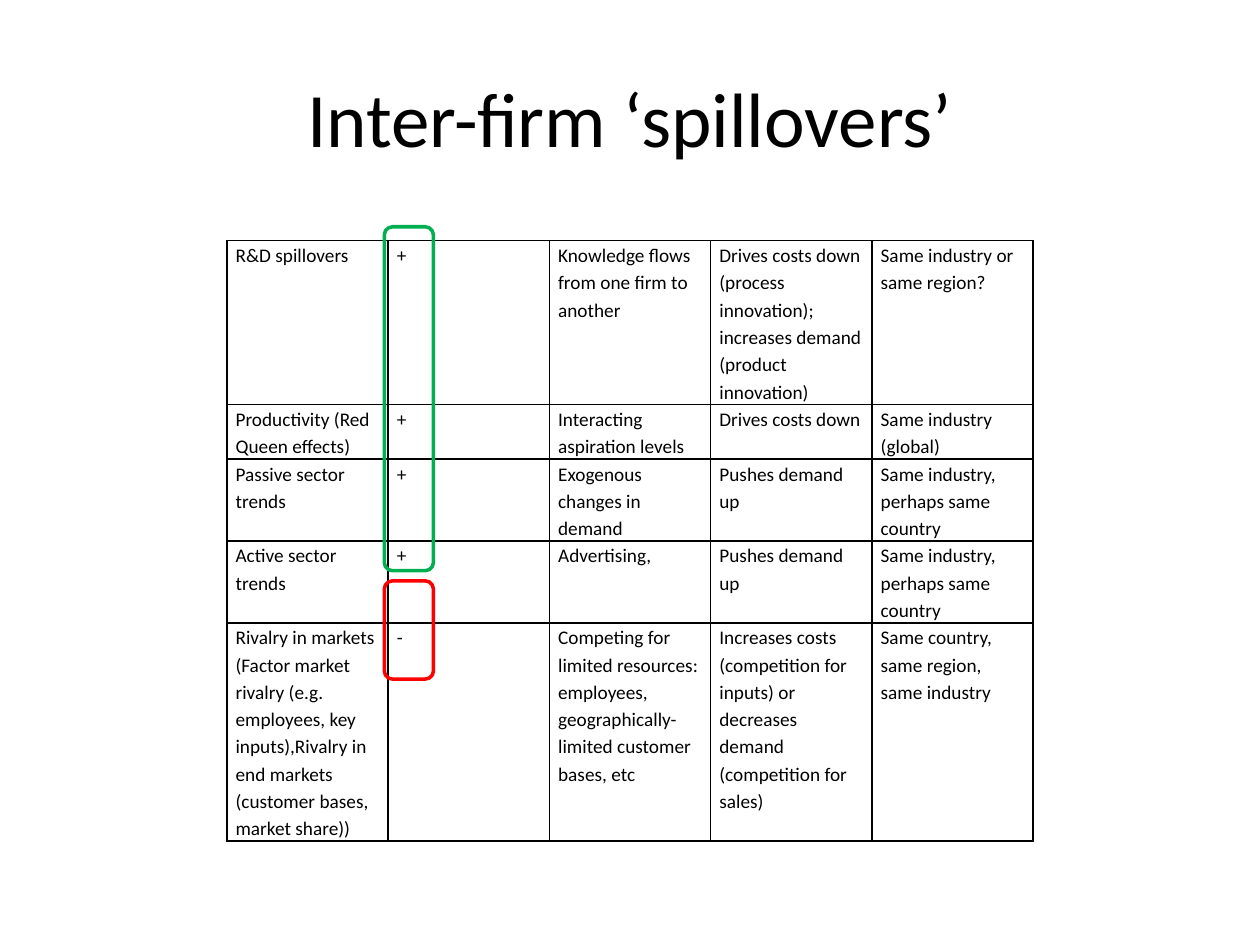
import pptx
import pptx.dml.color
import pptx.enum.shapes
import pptx.enum.text
import pptx.oxml
import pptx.oxml.ns
import pptx.util
from pptx.util import Inches

ROWS = [
    (6, ["R&D spillovers", "+", "Knowledge flows from one firm to another",
         "Drives costs down (process innovation); increases demand (product innovation)",
         "Same industry or same region?"]),
    (2, ["Productivity (Red Queen effects)", "+", "Interacting aspiration levels",
         "Drives costs down", "Same industry (global)"]),
    (3, ["Passive sector trends", "+", "Exogenous changes in demand",
         "Pushes demand up", "Same industry, perhaps same country"]),
    (3, ["Active sector trends", "+", "Advertising,",
         "Pushes demand up", "Same industry, perhaps same country"]),
    (8, ["Rivalry in markets (Factor market rivalry (e.g. employees, key inputs),"
         "Rivalry in end markets (customer bases, market share))", "-",
         "Competing for limited resources: employees, geographically-limited customer bases, etc",
         "Increases costs (competition for inputs) or decreases demand (competition for sales)",
         "Same country, same region, same industry"]),
]


def color(value):
    return pptx.dml.color.RGBColor.from_string(value)


def apply(target, values):
    for name, value in values.items():
        setattr(target, name, value)


class SlideBuilder:
    font = "Calibri"
    ink = "000000"
    cell_format = {
        "margin_left": Inches(0.07), "margin_right": Inches(0.07),
        "margin_top": 0, "margin_bottom": 0,
        "vertical_anchor": pptx.enum.text.MSO_ANCHOR.TOP,
    }

    def __init__(self, s):
        self.s = s

    def text(self, tf, text, size, **paragraph_format):
        p = tf.paragraphs[0]
        apply(p, paragraph_format)
        r = p.add_run()
        r.text = text
        apply(r.font, {"name": self.font, "size": pptx.util.Pt(size), "bold": False})
        r.font.color.rgb = color(self.ink)

    def title(self, text, left, top, width, height):
        sp = self.s.shapes.title
        apply(sp, {"left": Inches(left), "top": Inches(top),
                   "width": Inches(width), "height": Inches(height)})
        sp.text_frame.vertical_anchor = pptx.enum.text.MSO_ANCHOR.MIDDLE
        self.text(sp.text_frame, text, 44, alignment=pptx.enum.text.PP_ALIGN.CENTER)

    def borders(self, cell):
        tcPr = cell._tc.get_or_add_tcPr()
        for i, side in enumerate(("lnL", "lnR", "lnT", "lnB")):
            tcPr.insert(i, pptx.oxml.parse_xml(
                f'<a:{side} {pptx.oxml.ns.nsdecls("a")} w="{pptx.util.Pt(1)}">'
                f'<a:solidFill><a:srgbClr val="{self.ink}"/></a:solidFill></a:{side}>'))

    def table(self, rows, left, top, column_width, line_height):
        columns = len(rows[0][1])
        height = sum(lines for lines, _ in rows) * line_height
        table = self.s.shapes.add_table(
            len(rows), columns, Inches(left), Inches(top),
            Inches(columns * column_width), Inches(height)).table
        apply(table, {"first_row": False, "horz_banding": False})
        for column in table.columns:
            column.width = Inches(column_width)
        for row, (lines, texts) in zip(table.rows, rows):
            row.height = Inches(lines * line_height)
            for cell, text in zip(row.cells, texts):
                apply(cell, self.cell_format)
                cell.fill.background()
                self.borders(cell)
                self.text(cell.text_frame, text, 11, line_spacing=1.15)

    def outline(self, left, top, width, height, line_color):
        sp = self.s.shapes.add_shape(
            pptx.enum.shapes.MSO_SHAPE.ROUNDED_RECTANGLE,
            Inches(left), Inches(top), Inches(width), Inches(height))
        sp.shadow.inherit = False
        sp.fill.background()
        sp.line.color.rgb = color(line_color)
        sp.line.width = pptx.util.Pt(2)


def main():
    prs = pptx.Presentation()
    apply(prs, {"slide_width": Inches(10), "slide_height": Inches(7.5)})
    slide = SlideBuilder(prs.slides.add_slide(prs.slide_layouts[5]))
    slide.title("Inter-firm ‘spillovers’", 0.5, 0.3, 9, 1.25)
    slide.table(ROWS, left=1.8, top=1.91, column_width=1.28, line_height=0.216)
    for top, height, line_color in ((1.8, 2.73, "00B050"), (4.61, 0.78, "FF0000")):
        slide.outline(3.05, top, 0.39, height, line_color)
    prs.save("out.pptx")


if __name__ == "__main__":
    main()
